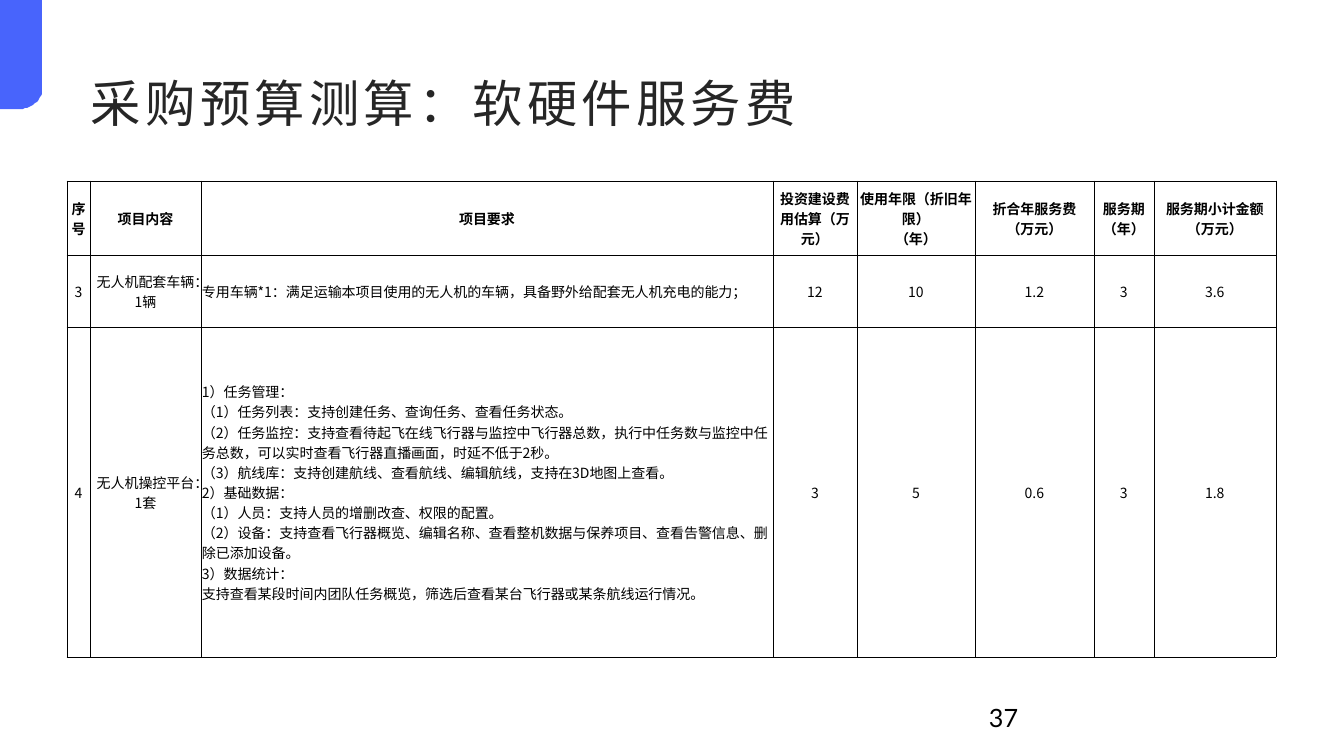
from copy import deepcopy
from math import cos, pi, sin

from lxml.etree import SubElement
from pptx import Presentation
from pptx.dml.color import RGBColor
from pptx.enum.text import MSO_ANCHOR as Anchor, PP_ALIGN as Align
from pptx.oxml.ns import qn
from pptx.util import Pt

PX = 914400 / 100.8
COLORS = {"accent": "4864FC", "title": "262626", "ink": "000000"}
CJK = "Noto Sans CJK SC"


def px(length):
    return round(length * PX)


def write(frame, text, size, font, color="ink", bold=False, spacing=0,
          align=Align.LEFT, anchor=Anchor.TOP):
    """Fill the frame with one paragraph; newlines become line breaks."""
    frame.word_wrap = True
    frame.vertical_anchor = anchor
    para = frame.paragraphs[0]
    para.text = text
    para.alignment = align
    for span in para.runs:
        span.font.size = Pt(size)
        span.font.bold = bold
        span.font.name = font
        span.font.color.rgb = RGBColor.from_string(COLORS[color])
        props = span.font._element
        props.set("lang", "zh-CN")
        if spacing:
            props.set("spc", str(spacing * 100))
        SubElement(props, qn("a:ea"), typeface=CJK)
    for line_break in para._p.findall(qn("a:br")):
        line_break.append(deepcopy(props))


deck = Presentation()
deck.slide_width, deck.slide_height = px(1344), px(756)
page = deck.slides.add_slide(deck.slide_layouts[6])

# Corner tab with a rounded lower right corner
TAB_WIDTH, TAB_HEIGHT, RADIUS_X, RADIUS_Y, STEPS = 42, 109, 24, 19, 16
angles = [pi / 2 * step / STEPS for step in range(STEPS + 1)]
corner = [(TAB_WIDTH - RADIUS_X * (1 - cos(angle)),
           TAB_HEIGHT - RADIUS_Y * (1 - sin(angle))) for angle in angles]
outline = page.shapes.build_freeform(0, 0, scale=PX)
outline.add_line_segments([(TAB_WIDTH, 0), *corner, (0, TAB_HEIGHT)], close=True)
tab = outline.convert_to_shape()
tab.shadow.inherit = False
tab.fill.solid()
tab.fill.fore_color.rgb = RGBColor.from_string(COLORS["accent"])
tab.line.fill.background()

number_box = page.shapes.add_textbox(px(979), px(697), px(288), px(35))
write(number_box.text_frame, "37", 18, "Lato")

title_box = page.shapes.add_textbox(px(91), px(53), px(1190), px(80))
title = title_box.text_frame
title.margin_left = title.margin_right = title.margin_top = title.margin_bottom = 0
write(title, "采购预算测算：软硬件服务费", 36, "Cabin", color="title", spacing=3,
      anchor=Anchor.BOTTOM)

# Budget table
PLATFORM_NEEDS = """1）任务管理：
（1）任务列表：支持创建任务、查询任务、查看任务状态。
（2）任务监控：支持查看待起飞在线飞行器与监控中飞行器总数，执行中任务数与监控中任务总数，可以实时查看飞行器直播画面，时延不低于2秒。
（3）航线库：支持创建航线、查看航线、编辑航线，支持在3D地图上查看。
2）基础数据：
（1）人员：支持人员的增删改查、权限的配置。
（2）设备：支持查看飞行器概览、编辑名称、查看整机数据与保养项目、查看告警信息、删除已添加设备。
3）数据统计：
支持查看某段时间内团队任务概览，筛选后查看某台飞行器或某条航线运行情况。"""
ROWS = [
    ["序号", "项目内容", "项目要求", "投资建设费用估算（万元）",
     "使用年限（折旧年限）\n（年）", "折合年服务费\n（万元）",
     "服务期\n（年）", "服务期小计金额\n（万元）"],
    ["3", "无人机配套车辆：1辆",
     "专用车辆*1：满足运输本项目使用的无人机的车辆，具备野外给配套无人机充电的能力；",
     "12", "10", "1.2", "3", "3.6"],
    ["4", "无人机操控平台：1套", PLATFORM_NEEDS, "3", "5", "0.6", "3", "1.8"],
]
COLUMN_WIDTHS = [23, 111, 572, 84, 118, 119, 60, 122]
ROW_HEIGHTS = [74, 72, 330]
NEEDS_COLUMN = 2

table = page.shapes.add_table(len(ROWS), len(COLUMN_WIDTHS), px(67), px(181),
                              px(sum(COLUMN_WIDTHS)), px(sum(ROW_HEIGHTS))).table
table.first_row = table.horz_banding = False
for column, width in zip(table.columns, COLUMN_WIDTHS):
    column.width = px(width)
for row, height in zip(table.rows, ROW_HEIGHTS):
    row.height = px(height)

for row_index, texts in enumerate(ROWS):
    for column_index, text in enumerate(texts):
        cell = table.cell(row_index, column_index)
        is_header = row_index == 0
        is_needs = column_index == NEEDS_COLUMN and not is_header
        write(cell.text_frame, text, 10, CJK, bold=is_header,
              align=Align.LEFT if is_needs else Align.CENTER)
        cell.vertical_anchor = Anchor.MIDDLE
        cell.margin_left = cell.margin_right = cell.margin_top = px(1)
        cell.margin_bottom = 0
        cell_props = cell._tc.get_or_add_tcPr()
        for side in ("lnL", "lnR", "lnT", "lnB"):
            border = SubElement(cell_props, qn(f"a:{side}"), w=str(Pt(0.5)))
            fill = SubElement(border, qn("a:solidFill"))
            SubElement(fill, qn("a:srgbClr"), val=COLORS["ink"])
        cell.fill.background()

deck.save("out.pptx")
